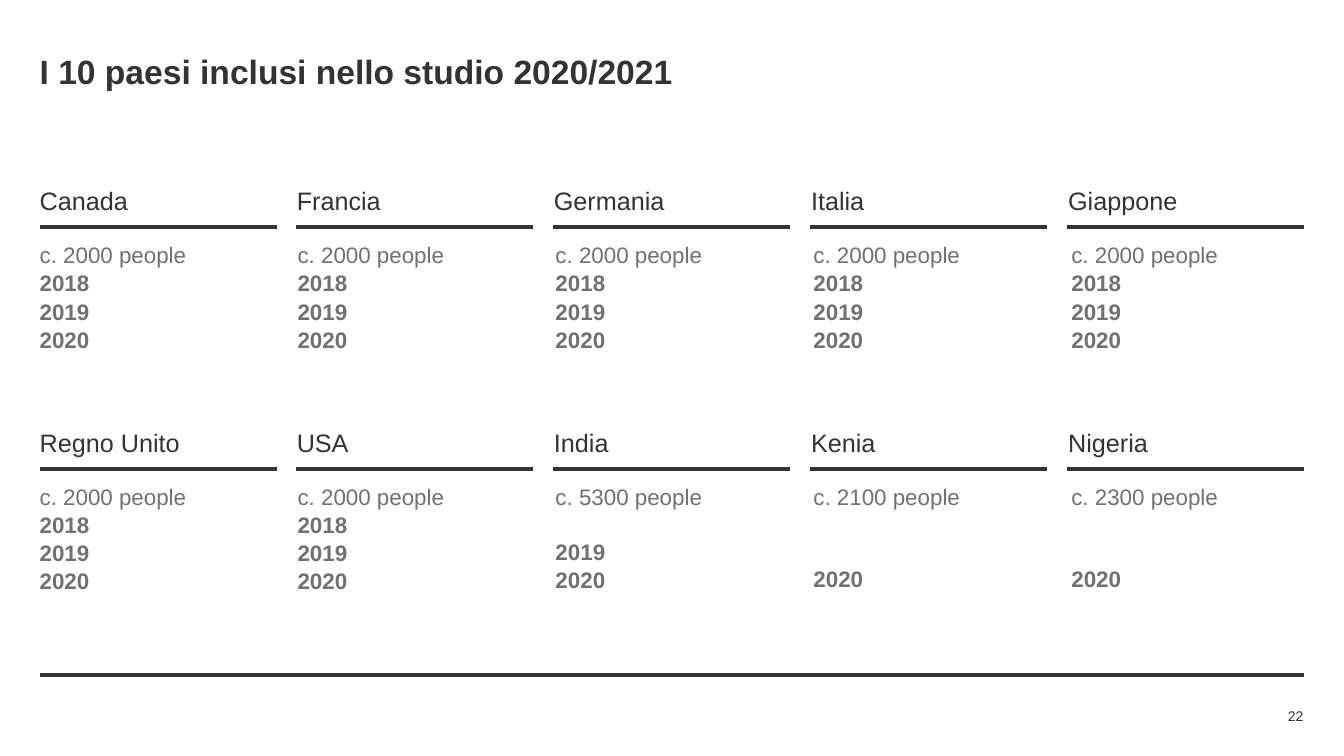
from lxml.etree import SubElement
from pptx import Presentation
from pptx.dml.color import RGBColor
from pptx.enum.shapes import MSO_CONNECTOR
from pptx.enum.text import MSO_ANCHOR, MSO_AUTO_SIZE, PP_ALIGN
from pptx.oxml.ns import qn
from pptx.util import Cm, Pt

DARK, GREY = "333333", "717171"
YEARS = ["2018", "2019", "2020"]
COUNTRIES = [
    [("Canada", 2000, 3), ("Francia", 2000, 3), ("Germania", 2000, 3),
     ("Italia", 2000, 3), ("Giappone", 2000, 3)],
    [("Regno Unito", 2000, 3), ("USA", 2000, 3), ("India", 5300, 2),
     ("Kenia", 2100, 1), ("Nigeria", 2300, 1)],
]
LEFT, COL_WIDTH, ROW_PITCH = 1, 5.97, 6.09
RULE_PITCH, NAME_PITCH, DETAIL_PITCH = 6.47, 6.48, 6.5
YEAR_LINE = 19.3


def color(value):
    return RGBColor.from_string(value)


class Deck:
    font = "Arial"
    spacing = 1.05

    def __init__(self, prs):
        self.s = prs.slides.add_slide(prs.slide_layouts[5])

    def rule(self, x, y, width):
        line = self.s.shapes.add_connector(
            MSO_CONNECTOR.STRAIGHT, Cm(x), Cm(y), Cm(x + width), Cm(y))
        line.line.color.rgb = color(DARK)
        line.line.width = Pt(3)
        SubElement(line._element.spPr, qn("a:effectLst"))

    def frame(self, sp, anchor):
        tf = sp.text_frame
        tf.margin_left = tf.margin_right = tf.margin_top = tf.margin_bottom = 0
        tf.word_wrap = True
        tf.auto_size = MSO_AUTO_SIZE.NONE
        tf.vertical_anchor = anchor
        return tf

    def paragraph(self, p, text, size, fill, bold=False, align=PP_ALIGN.LEFT, before=0):
        p.alignment = align
        p.line_spacing = self.spacing
        p.space_before = Pt(before)
        r = p.add_run()
        r.text = text
        r.font.name = self.font
        r.font.size = Pt(size)
        r.font.bold = bold
        r.font.color.rgb = color(fill)

    def title(self, text, x, y, width, height):
        sp = self.s.shapes.title
        sp.left, sp.top, sp.width, sp.height = Cm(x), Cm(y), Cm(width), Cm(height)
        tf = self.frame(sp, MSO_ANCHOR.MIDDLE)
        self.paragraph(tf.paragraphs[0], text, 24, DARK, bold=True)

    def text(self, text, x, y, width, height, size, fill,
             align=PP_ALIGN.LEFT, anchor=MSO_ANCHOR.TOP):
        sp = self.s.shapes.add_textbox(Cm(x), Cm(y), Cm(width), Cm(height))
        tf = self.frame(sp, anchor)
        self.paragraph(tf.paragraphs[0], text, size, fill, align=align)
        return tf

    def details(self, people, waves, x, y):
        tf = self.text(f"c. {people} people", x, y, COL_WIDTH, 2.74, 16, GREY)
        missing = len(YEARS) - waves
        for i, year in enumerate(YEARS[missing:]):
            gap = missing * YEAR_LINE if i == 0 else 0
            self.paragraph(tf.add_paragraph(), year, 16, GREY, bold=True, before=gap)


def main():
    prs = Presentation()
    prs.slide_width, prs.slide_height = Cm(33.87), Cm(19.05)
    deck = Deck(prs)
    deck.rule(LEFT, 17, 31.87)
    deck.title("I 10 paesi inclusi nello studio 2020/2021", LEFT, 1.2, 31.85, 1.12)
    for row, countries in enumerate(COUNTRIES):
        y = row * ROW_PITCH
        for col, (name, people, waves) in enumerate(countries):
            deck.rule(LEFT + col * RULE_PITCH, 5.72 + y, COL_WIDTH)
            deck.text(name, LEFT + col * NAME_PITCH, 4.64 + y, COL_WIDTH, 0.76, 18, DARK)
            deck.details(people, waves, LEFT + col * DETAIL_PITCH, 6.05 + y)
    deck.text("22", 30.15, 17.75, 2.7, 0.56, 10, DARK,
              align=PP_ALIGN.RIGHT, anchor=MSO_ANCHOR.MIDDLE)
    prs.save("out.pptx")


if __name__ == "__main__":
    main()
